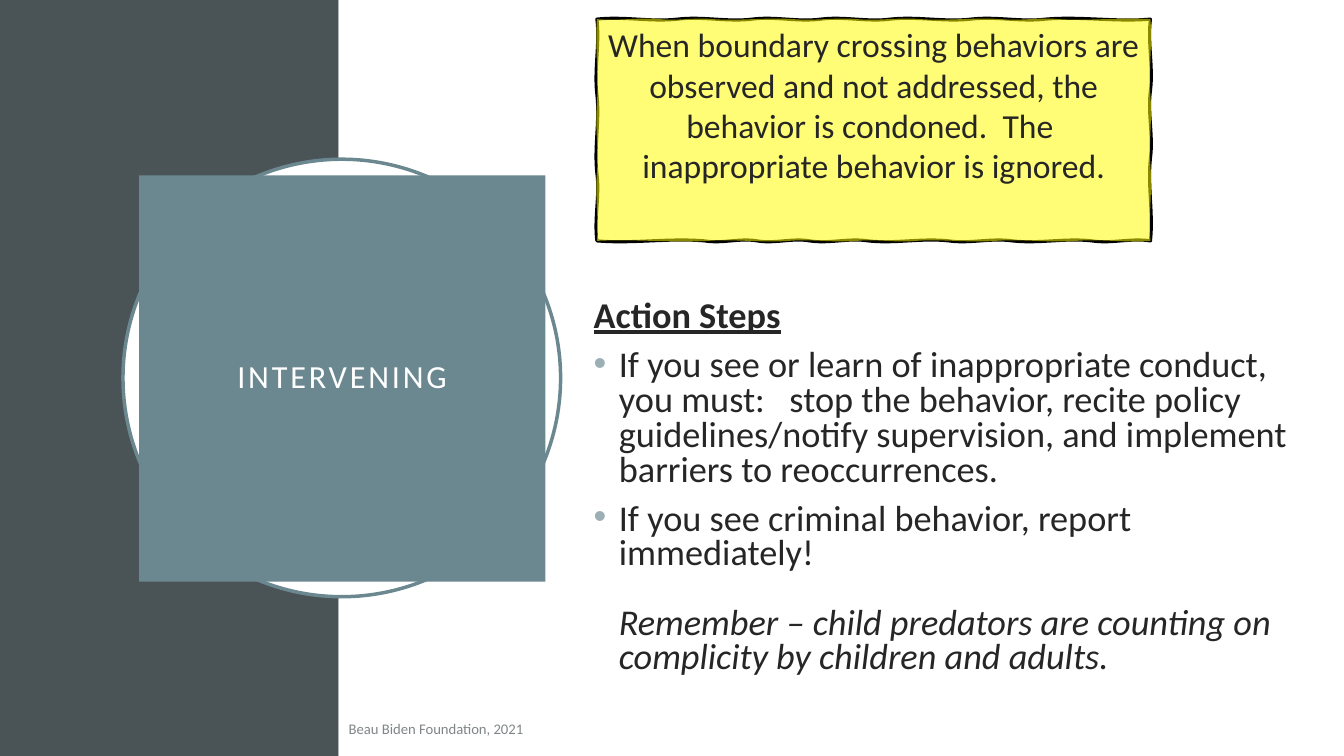
from lxml import etree
from pptx import Presentation
from pptx import util as u
from pptx.dml.color import RGBColor
from pptx.enum import shapes, text
from pptx.oxml.ns import qn

COLORS = {
    "slate": "4A5356",
    "teal": "6B8891",
    "bullet": "9BAFB5",
    "white": "FFFFFF",
    "ink": "262626",
    "credit": "808688",
    "yellow": "FFFC00",
    "black": "000000",
}


def set_font(paragraph, size, color):
    paragraph.font.name = "Calibri"
    paragraph.font.size = u.Pt(size)
    paragraph.font.color.rgb = RGBColor.from_string(COLORS[color])


presentation = Presentation()
presentation.slide_width = u.Inches(13.33)
presentation.slide_height = u.Inches(7.5)
slide = presentation.slides.add_slide(presentation.slide_layouts[5])

# Side panels and ring
RECTANGLE, OVAL = shapes.MSO_SHAPE.RECTANGLE, shapes.MSO_SHAPE.OVAL
for kind, left, top, width, height, fill, line in [
    (RECTANGLE, 0, 0, 3.36, 7.5, "slate", None),
    (RECTANGLE, 3.36, 0, 9.97, 7.5, "white", None),
    (OVAL, 1.22, 1.58, 4.34, 4.34, "white", "teal"),
]:
    shape = slide.shapes.add_shape(
        kind, u.Inches(left), u.Inches(top), u.Inches(width), u.Inches(height))
    shape.shadow.inherit = False
    shape.fill.solid()
    shape.fill.fore_color.rgb = RGBColor.from_string(COLORS[fill])
    if line:
        shape.line.color.rgb = RGBColor.from_string(COLORS[line])
        shape.line.width = u.Pt(2.5)
    else:
        shape.line.fill.background()

# Title, moved in front of the ring
title = slide.shapes.title
slide.shapes._spTree.append(title._element)
title.left, title.top = u.Inches(1.38), u.Inches(1.74)
title.width = title.height = u.Inches(4.03)
title.fill.solid()
title.fill.fore_color.rgb = RGBColor.from_string(COLORS["teal"])
title.text_frame.vertical_anchor = text.MSO_ANCHOR.MIDDLE
title.text_frame.text = "INTERVENING"
paragraph = title.text_frame.paragraphs[0]
paragraph.alignment = text.PP_ALIGN.CENTER
paragraph.line_spacing = 0.9
set_font(paragraph, 23, "white")
paragraph.runs[0]._r.get_or_add_rPr().set("spc", "200")

# Action steps: wording, bulleted, space before
body = slide.shapes.add_textbox(u.Inches(5.79), u.Inches(2.93), u.Inches(7.17), u.Inches(4.24))
body.text_frame.word_wrap = True
steps = [
    ("Action Steps", False, 0),
    ("If you see or learn of inappropriate conduct, you must: \u00a0 stop the behavior, "
     "recite policy guidelines/notify supervision, and implement barriers to "
     "reoccurrences.", True, 10.5),
    ("If you see criminal behavior, report immediately!", True, 10),
    ("Remember – child predators are counting on complicity by children and adults.", False, 24.5),
]
for index, (wording, bulleted, space) in enumerate(steps):
    paragraph = body.text_frame.paragraphs[0] if index == 0 else body.text_frame.add_paragraph()
    paragraph.text = wording
    paragraph.line_spacing = 0.8
    paragraph.space_before = u.Pt(space)
    properties = paragraph._p.get_or_add_pPr()
    if index > 0:
        properties.set("marL", str(u.Inches(0.25)))
    if bulleted:
        properties.set("indent", str(u.Inches(-0.25)))
        bullet_color = etree.SubElement(properties, qn("a:buClr"))
        etree.SubElement(bullet_color, qn("a:srgbClr"), val=COLORS["bullet"])
        etree.SubElement(properties, qn("a:buFont"), typeface="Arial")
        etree.SubElement(properties, qn("a:buChar"), char="•")
    set_font(paragraph, 25.9, "ink")
heading, closing = body.text_frame.paragraphs[0], body.text_frame.paragraphs[-1]
heading.font.bold = heading.font.underline = True
closing.font.italic = True

# Credit line
credit = slide.shapes.add_textbox(u.Inches(3.36), u.Inches(7.05), u.Inches(5.31), u.Inches(0.35))
credit.text_frame.word_wrap = True
credit.text_frame.vertical_anchor = text.MSO_ANCHOR.MIDDLE
credit.text_frame.text = "Beau Biden Foundation, 2021"
set_font(credit.text_frame.paragraphs[0], 10.5, "credit")

# Yellow note: an outline contour and a fill contour, each with stops along its four sides
left, top, right, bottom = 5.92, 0.19, 11.41, 2.39
contours = [
    ([6.72, 7.46, 8.14, 8.83, 9.63, 10.37, right], [0.9, 1.57, bottom],
     [10.83, 10.04, 9.41, 8.61, 8.03, 7.51, 6.99, left], [1.72, 0.94, top]),
    ([6.55, 7.07, 7.87, 8.5, 9.13, 9.93, 10.5, right], [0.96, 1.65, bottom],
     [10.67, 9.87, 9.08, 8.5, 7.82, 7.02, left], [1.72, 1.03, top]),
]
start = (u.Inches(left), u.Inches(top))
builder = slide.shapes.build_freeform(*start)
for number, (top_stops, right_stops, bottom_stops, left_stops) in enumerate(contours):
    if number:
        builder.move_to(*start)
    stops = ([(x, top) for x in top_stops] + [(right, y) for y in right_stops]
             + [(x, bottom) for x in bottom_stops] + [(left, y) for y in left_stops])
    builder.add_line_segments([(u.Inches(x), u.Inches(y)) for x, y in stops], close=True)
note = builder.convert_to_shape()
note.shadow.inherit = False

# Give each contour its own path and bend its segments into hand-drawn waves
outline_path = next(note._element.iter(qn("a:path")))
fill_path = etree.SubElement(outline_path.getparent(), qn("a:path"), dict(outline_path.attrib))
second_start = outline_path.findall(qn("a:moveTo"))[1]
for command in [second_start, *second_start.itersiblings()]:
    fill_path.append(command)
outline_path.set("fill", "none")
fill_path.set("stroke", "0")
for contour_path, wave in [(outline_path, u.Inches(0.03)), (fill_path, u.Inches(-0.02))]:
    for command in list(contour_path):
        if command.tag == qn("a:close"):
            continue
        x, y = int(command[0].get("x")), int(command[0].get("y"))
        if command.tag == qn("a:lnTo"):
            curve = etree.Element(qn("a:cubicBezTo"))
            for part, shift in [(1 / 3, -wave), (2 / 3, wave), (1, 0)]:
                point_x = round(last_x + (x - last_x) * part) + (shift if x == last_x else 0)
                point_y = round(last_y + (y - last_y) * part) + (shift if y == last_y else 0)
                etree.SubElement(curve, qn("a:pt"), x=str(point_x), y=str(point_y))
            contour_path.replace(command, curve)
        last_x, last_y = x, y

# Note colours and wording
note.line.color.rgb = RGBColor.from_string(COLORS["black"])
note.line.width = u.Pt(2.25)
note.fill.solid()
note.fill.fore_color.rgb = RGBColor.from_string(COLORS["yellow"])
note_color = note._element.spPr.find(qn("a:solidFill")).find(qn("a:srgbClr"))
etree.SubElement(note_color, qn("a:alpha"), val="54000")
frame = note.text_frame
frame.word_wrap = True
frame.vertical_anchor = text.MSO_ANCHOR.TOP
frame.text = ("When boundary crossing behaviors are observed and not addressed, "
              "the behavior is condoned.  The  inappropriate behavior is ignored.")
paragraph = frame.paragraphs[0]
paragraph.alignment = text.PP_ALIGN.CENTER
set_font(paragraph, 24, "ink")

presentation.save("out.pptx")
